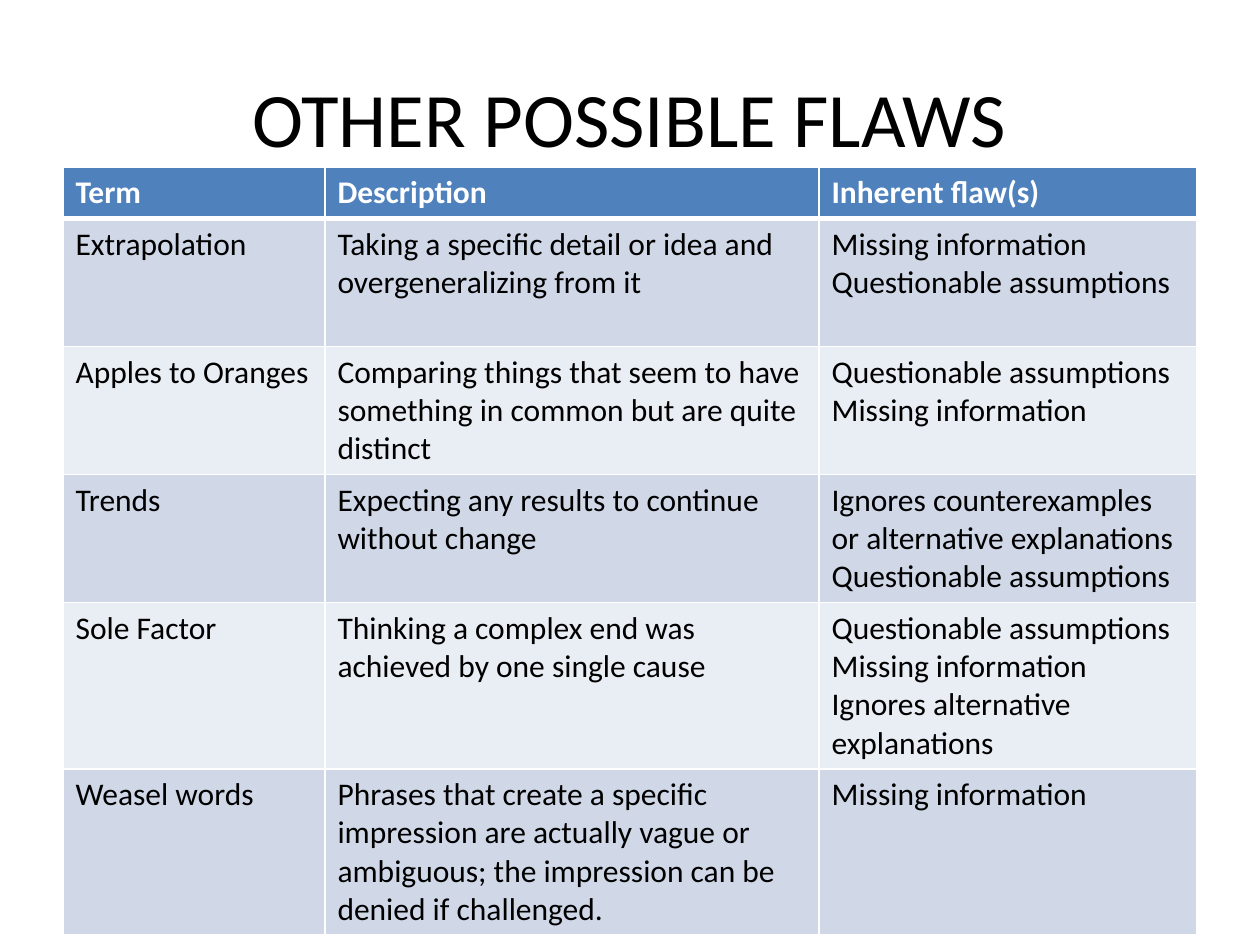
from lxml import etree
from pptx import Presentation
from pptx.dml.color import RGBColor
from pptx.enum.text import MSO_ANCHOR, PP_ALIGN
from pptx.oxml.ns import qn
from pptx.util import Cm, Pt

MIDDLE = MSO_ANCHOR.MIDDLE
CENTER = PP_ALIGN.CENTER
FONT = "Calibri"
WHITE, BLACK = "FFFFFF", "000000"
HEADER_FILL = "4F81BD"
BAND_FILLS = ["D0D8E8", "E9EDF4"]


def add_text(p, text, size, color, bold=False):
    r = p.add_run()
    r.text = text
    r.font.name = FONT
    r.font.size = Pt(size)
    r.font.bold = bold
    r.font.color.rgb = RGBColor.from_string(color)


def set_borders(cell, widths):
    tcPr = cell._tc.get_or_add_tcPr()
    for side, width in widths.items():
        ln = etree.SubElement(tcPr, qn("a:ln" + side), w=str(Pt(width)))
        fill = etree.SubElement(ln, qn("a:solidFill"))
        etree.SubElement(fill, qn("a:srgbClr"), val=WHITE)


prs = Presentation()
prs.slide_width, prs.slide_height = Cm(25.4), Cm(19.05)
s = prs.slides.add_slide(prs.slide_layouts[6])

# Title
sp = s.shapes.add_textbox(Cm(1.27), Cm(0.76), Cm(22.86), Cm(3.18))
tf = sp.text_frame
tf.word_wrap = True
tf.vertical_anchor = MIDDLE
p = tf.paragraphs[0]
p.alignment = CENTER
add_text(p, "OTHER POSSIBLE FLAWS", 44, BLACK)

# Table content: one list of paragraphs per flaw cell
MISSING = "Missing information"
ASSUMED = "Questionable assumptions"
rows = [
    ("Term", "Description", ["Inherent flaw(s)"]),
    ("Extrapolation",
     "Taking a specific detail or idea and overgeneralizing from it",
     [MISSING, ASSUMED]),
    ("Apples to Oranges",
     "Comparing things that seem to have something in common but are quite distinct",
     [ASSUMED, MISSING]),
    ("Trends",
     "Expecting any results to continue without change",
     ["Ignores counterexamples or alternative explanations", ASSUMED]),
    ("Sole Factor",
     "Thinking a complex end was achieved by one single cause",
     [ASSUMED, MISSING, "Ignores alternative explanations"]),
    ("Weasel words",
     "Phrases that create a specific impression are actually vague or "
     "ambiguous; the impression can be denied if challenged.",
     [MISSING]),
]
col_widths = [5.28, 9.96, 7.62]
row_heights = [1.03, 2.58, 2.58, 2.58, 3.35, 3.35]

# Table grid
table = s.shapes.add_table(len(rows), len(col_widths), Cm(1.27), Cm(3.38),
                           Cm(sum(col_widths)), Cm(sum(row_heights))).table
for col, width in zip(table.columns, col_widths):
    col.width = Cm(width)
for row, height in zip(table.rows, row_heights):
    row.height = Cm(height)

# Table cells
for i, (term, description, flaws) in enumerate(rows):
    header = i == 0
    fill = HEADER_FILL if header else BAND_FILLS[(i - 1) % 2]
    widths = {"L": 1, "R": 1, "T": 3 if i == 1 else 1, "B": 3 if header else 1}
    for j, lines in enumerate([[term], [description], flaws]):
        cell = table.cell(i, j)
        set_borders(cell, widths)
        cell.fill.solid()
        cell.fill.fore_color.rgb = RGBColor.from_string(fill)
        tf = cell.text_frame
        for k, line in enumerate(lines):
            p = tf.add_paragraph() if k else tf.paragraphs[0]
            add_text(p, line, 18, WHITE if header else BLACK, header)

prs.save("out.pptx")
